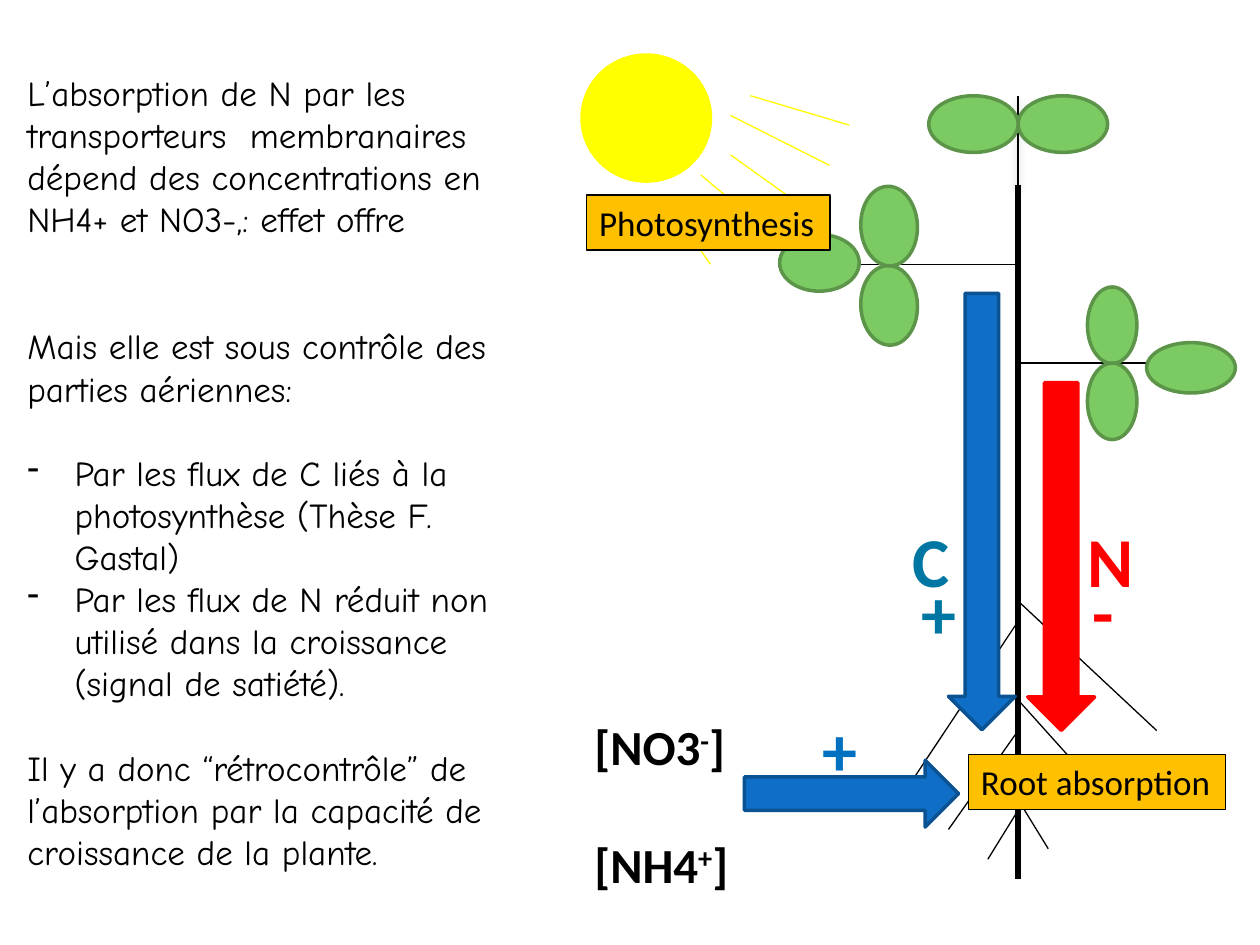
from lxml import etree
from pptx import Presentation
from pptx.dml.color import RGBColor
from pptx.enum.shapes import MSO_CONNECTOR as Connector, MSO_SHAPE as Shape
from pptx.enum.text import MSO_ANCHOR as Anchor, PP_ALIGN as Align
from pptx.oxml.ns import qn
from pptx.util import Pt

COLORS = {
    "black": "000000", "leaf": "7CCA62", "leaf_edge": "5C9549",
    "blue": "0F6FC6", "blue_edge": "0B5292", "plus_blue": "0070C0",
    "teal": "0076A3", "red": "FF0000", "yellow": "FFFF00",
    "orange": "FFC000", "shadow": "2B4821",
}
BODY_FONT, LABEL_FONT = "Comic Neue", "Calibri"
LINE = 24.3
BULLET_INDENT = 27

NOTES = [
    ("L’absorption de N par les transporteurs  membranaires dépend des "
     "concentrations en NH4+ et NO3-,: effet offre", 0, False),
    ("Mais elle est sous contrôle des parties aériennes:", 2, False),
    ("Par les flux de C liés à la photosynthèse (Thèse F. Gastal)", 1, True),
    ("Par les flux de N réduit non utilisé dans la croissance "
     "(signal de satiété).", 0, True),
    ("Il y a donc “rétrocontrôle” de l’absorption par la capacité de "
     "croissance de la plante.", 1, False),
]
STEM_X, STEM_TOP, STEM_BOTTOM, TIP_Y = 581.8, 106, 502.5, 54.7
ROOTS = [
    (355, 514, 457), (417.5, 542, 474), (463, 564.5, 491),
    (343.5, 661, 417.5), (400, 633, 457), (457, 599, 485),
]
PETIOLES = [(207.4, 655), (151.2, 491)]
LEAVES = [
    (581.8, 54.7, 51.1, 32.4, 0), (530.7, 54.7, 51.1, 32.4, 0),
    (621.4, 164, 28.3, 43.7, 0), (621.4, 207.5, 28.3, 43.7, 0),
    (655.2, 195.8, 50.7, 28.8, 0), (445.5, 134, 45.5, 32.4, 0),
    (485.3, 158.3, 45.5, 32.4, 87.4), (485.3, 113, 45.5, 32.4, 87.4),
]
SUN = (332.6, 31.5, 73.4, 72)
RAYS = [
    (417.5, 66, 474, 94.5), (400.5, 100, 434, 128), (417.5, 88.5, 457, 116.8),
    (428.8, 54.7, 485.3, 71.5), (378, 111.6, 406, 151),
]
ARROWS = [
    (Shape.DOWN_ARROW, (542, 167.6, 38.2, 249.4), "blue", "blue_edge"),
    (Shape.DOWN_ARROW, (587.3, 218.7, 38.2, 198.7), "red", "red"),
    (Shape.RIGHT_ARROW, (425.4, 434.4, 122.4, 38.2), "blue", "blue_edge"),
]
IONS = [("[NO3", "-", "]"), ("[NH4", "+", "]")]
SIGNS = [
    ("+", (463, 400.4, 34.6, 55.4), "plus_blue"),
    ("+", (519.4, 322, 34.6, 55.4), "teal"),
    ("-", (617, 321.4, 26.6, 55.4), "red"),
    ("N", (614.2, 292.4, 41, 55.4), "red"),
    ("C", (514.2, 292.4, 36, 55.4), "teal"),
]
LABELS = [
    ("Photosynthesis", (335.3, 111.4, 139, 31.5)),
    ("Root absorption", (553.5, 431, 147, 31.5)),
]


def color(name):
    return RGBColor.from_string(COLORS[name])


def add_line(x1, y1, x2, y2, ink="black", width=0.75):
    line = page.shapes.add_connector(
        Connector.STRAIGHT, Pt(x1), Pt(y1), Pt(x2), Pt(y2))
    line.line.color.rgb = color(ink)
    line.line.width = Pt(width)
    return etree.SubElement(line._element.spPr, qn("a:effectLst"))


def add_shape(kind, place, fill, edge, width=2, rotation=0):
    shape = page.shapes.add_shape(kind, *map(Pt, place))
    shape.shadow.inherit = False
    shape.fill.solid()
    shape.fill.fore_color.rgb = color(fill)
    shape.line.color.rgb = color(edge)
    shape.line.width = Pt(width)
    shape.rotation = rotation
    return shape


def add_text(place, wrap=False):
    frame = page.shapes.add_textbox(*map(Pt, place)).text_frame
    frame.word_wrap = wrap
    return frame


def format_span(span, size, ink="black", name=LABEL_FONT, bold=False):
    span.font.size = Pt(size)
    span.font.name = name
    span.font.bold = bold
    span.font.color.rgb = color(ink)


def next_para(frame, index):
    return frame.add_paragraph() if index else frame.paragraphs[0]


deck = Presentation()
deck.slide_width, deck.slide_height = Pt(720), Pt(540)
page = deck.slides.add_slide(deck.slide_layouts[6])

add_line(STEM_X, STEM_TOP, STEM_X, STEM_BOTTOM, width=3)
for start_y, end_x, end_y in ROOTS:
    add_line(STEM_X, start_y, end_x, end_y)
effects = add_line(STEM_X, STEM_TOP, STEM_X, TIP_Y)
shadow = etree.SubElement(effects, qn("a:outerShdw"), blurRad=str(Pt(4.5)),
                          dist=str(Pt(3)), dir="5400000", rotWithShape="0")
tint = etree.SubElement(shadow, qn("a:srgbClr"), val=COLORS["shadow"])
etree.SubElement(tint, qn("a:alpha"), val="48000")
for y, end_x in PETIOLES:
    add_line(STEM_X, y, end_x, y)
for *place, rotation in LEAVES:
    add_shape(Shape.OVAL, place, "leaf", "leaf_edge", rotation=rotation)

add_shape(Shape.OVAL, SUN, "yellow", "yellow")
for ray in RAYS:
    add_line(*ray, ink="yellow")
for kind, place, fill, edge in ARROWS:
    add_shape(kind, place, fill, edge)

ions = add_text((332.6, 406, 93, 108.7))
for index, parts in enumerate(IONS):
    para = next_para(ions, index)
    para.space_before = Pt(33.5 * index)
    for part in parts:
        span = para.add_run()
        span.text = part
        format_span(span, 28, bold=True)
        if part in "+-":
            span._r.get_or_add_rPr().set("baseline", "30000")

for sign, place, ink in SIGNS:
    frame = add_text(place)
    frame.text = sign
    format_span(frame.paragraphs[0].runs[0], 40, ink, bold=True)

for label, place in LABELS:
    frame = add_shape(Shape.RECTANGLE, place, "orange", "black", 0.75).text_frame
    frame.text = label
    frame.word_wrap = False
    frame.vertical_anchor = Anchor.TOP
    frame.paragraphs[0].alignment = Align.LEFT
    format_span(frame.paragraphs[0].runs[0], 20)

notes = add_text((8.5, 37.5, 306, 492), wrap=True)
for index, (text, gap_lines, bulleted) in enumerate(NOTES):
    para = next_para(notes, index)
    para.text = text
    para.space_before = Pt(gap_lines * LINE)
    format_span(para.runs[0], 20, name=BODY_FONT)
    if bulleted:
        properties = para._p.get_or_add_pPr()
        properties.set("marL", str(Pt(BULLET_INDENT)))
        properties.set("indent", str(Pt(-BULLET_INDENT)))
        etree.SubElement(properties, qn("a:buFontTx"))
        etree.SubElement(properties, qn("a:buChar"), char="-")

deck.save("out.pptx")
